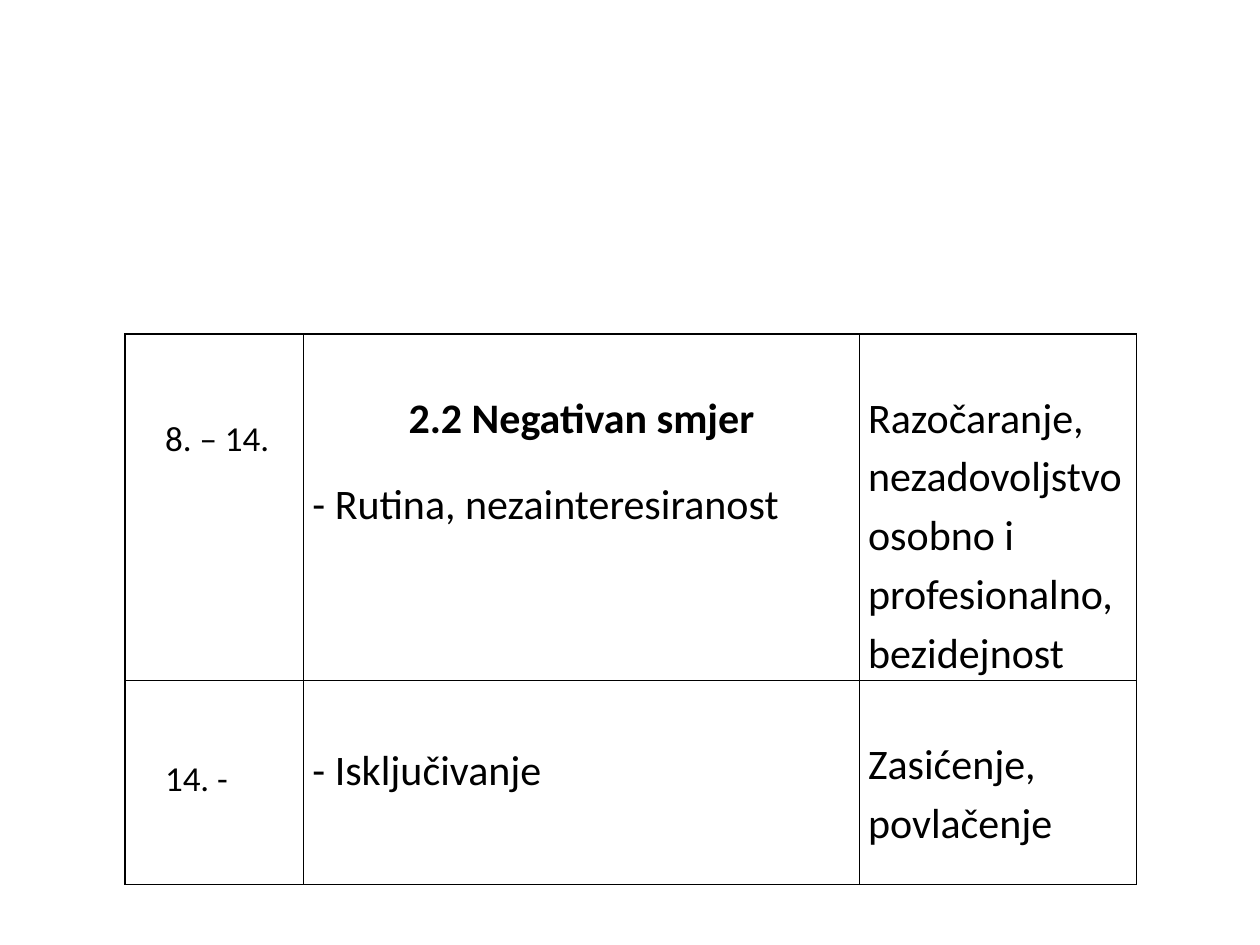
from lxml.etree import SubElement as Sub
from pptx import Presentation as Deck
from pptx.dml.color import RGBColor as Color
from pptx.enum.text import PP_ALIGN as Align
from pptx.oxml.ns import qn
from pptx.util import Inches, Pt

BLACK = Color(0, 0, 0)
COLS = [1.42, 4.41, 2.2]
ROWS = [2.75, 1.62]
BODY = {"size": Pt(24), "bold": False, "name": "Calibri"}
HEAD = {**BODY, "bold": True}
YEAR = {**BODY, "size": Pt(20)}
LEFT = {"alignment": Align.LEFT, "line_spacing": 1.15}
MID = {**LEFT, "alignment": Align.CENTER}
GAP = {**LEFT, "space_before": Pt(15.5)}

CELLS = [
    [
        (0.32, 0.62, [("8. – 14.", YEAR, LEFT)]),
        (0.07, 0.41, [("2.2 Negativan smjer", HEAD, MID),
                      ("- Rutina, nezainteresiranost", BODY, GAP)]),
        (0.07, 0.41, [("Razočaranje, nezadovoljstvo osobno i profesionalno,", BODY, LEFT),
                      ("bezidejnost", BODY, LEFT)]),
    ],
    [
        (0.32, 0.57, [("14. -", YEAR, LEFT)]),
        (0.07, 0.46, [("- Isključivanje", BODY, LEFT)]),
        (0.07, 0.41, [("Zasićenje, povlačenje", BODY, LEFT)]),
    ],
]


def style(item, values):
    for key, value in values.items():
        setattr(item, key, value)


def frame(cell):
    props = cell._tc.get_or_add_tcPr()
    for side in ("lnL", "lnR", "lnT", "lnB"):
        line = Sub(props, qn(f"a:{side}"), w=str(Pt(1)))
        fill = Sub(line, qn("a:solidFill"))
        Sub(fill, qn("a:srgbClr"), val=str(BLACK))
    cell.fill.background()


def write(cell, left, top, lines):
    style(cell, {"margin_left": Inches(left), "margin_right": Inches(0.07),
                 "margin_top": Inches(top), "margin_bottom": 0})
    text = cell.text_frame
    for i, (words, font, para) in enumerate(lines):
        part = text.add_paragraph() if i else text.paragraphs[0]
        style(part, para)
        run = part.add_run()
        run.text = words
        style(run.font, font)
        run.font.color.rgb = BLACK
    frame(cell)


def add_grid(slide, left, top, width, height):
    box = [Inches(n) for n in (left, top, width, height)]
    grid = slide.shapes.add_table(len(ROWS), len(COLS), *box).table
    style(grid, {"first_row": False, "horz_banding": False})
    for col, size in zip(grid.columns, COLS):
        col.width = Inches(size)
    for row, size, cells in zip(grid.rows, ROWS, CELLS):
        row.height = Inches(size)
        for cell, data in zip(row.cells, cells):
            write(cell, *data)


def main():
    deck = Deck()
    style(deck, {"slide_width": Inches(10), "slide_height": Inches(7.5)})
    slide = deck.slides.add_slide(deck.slide_layouts[6])
    add_grid(slide, 0.99, 2.65, sum(COLS), sum(ROWS))
    deck.save("out.pptx")


if __name__ == "__main__":
    main()
